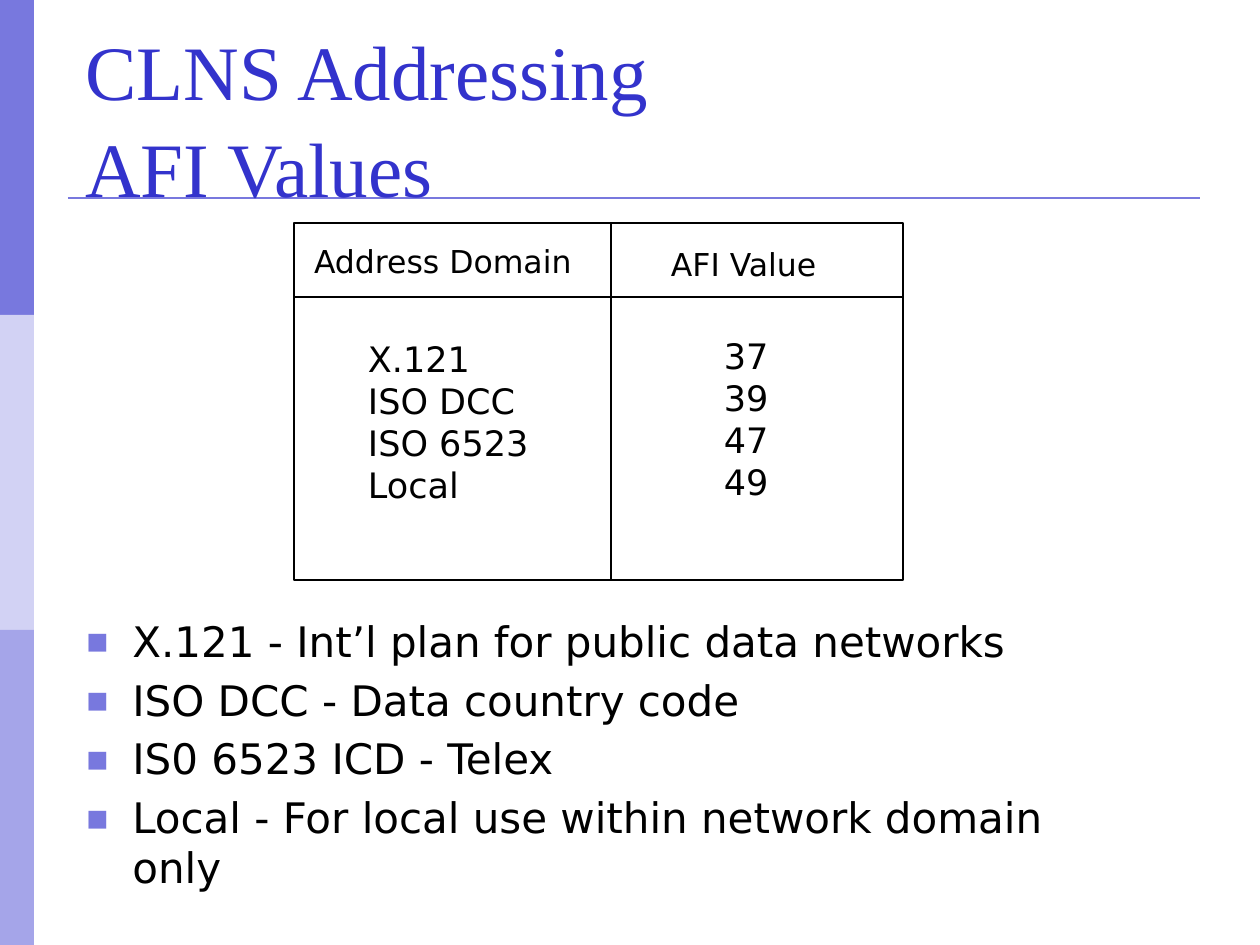
import dataclasses

import lxml.etree
import pptx
import pptx.dml.color
import pptx.enum.shapes
import pptx.enum.text
import pptx.oxml.ns
import pptx.util

PX_PER_INCH = 126
BODY_FONT = "DejaVu Sans"
BLACK = "000000"
ACCENT = "7878DE"
RULE_WIDTH = 1.5


@dataclasses.dataclass(frozen=True)
class Box:
    left: int
    top: int
    width: int
    height: int


@dataclasses.dataclass(frozen=True)
class TextStyle:
    size: int
    font: str = BODY_FONT
    color: str = BLACK


@dataclasses.dataclass(frozen=True)
class Label:
    box: Box
    lines: tuple[str, ...]
    style: TextStyle


def px(length: int) -> int:
    return round(length * pptx.util.Inches(1) / PX_PER_INCH)


def rgb(color: str) -> pptx.dml.color.RGBColor:
    return pptx.dml.color.RGBColor.from_string(color)


def bounds(box: Box) -> tuple[int, int, int, int]:
    return px(box.left), px(box.top), px(box.width), px(box.height)


def add_rectangle(slide, box: Box, fill: str | None = None, line: str | None = None) -> None:
    shape = slide.shapes.add_shape(pptx.enum.shapes.MSO_SHAPE.RECTANGLE, *bounds(box))
    shape.shadow.inherit = False
    if fill:
        shape.fill.solid()
        shape.fill.fore_color.rgb = rgb(fill)
    else:
        shape.fill.background()
    if line:
        shape.line.color.rgb = rgb(line)
        shape.line.width = pptx.util.Pt(RULE_WIDTH)
    else:
        shape.line.fill.background()


def add_rule(slide, start: tuple[int, int], end: tuple[int, int], color: str) -> None:
    rule = slide.shapes.add_connector(
        pptx.enum.shapes.MSO_CONNECTOR.STRAIGHT, *map(px, start + end)
    )
    rule.line.color.rgb = rgb(color)
    rule.line.width = pptx.util.Pt(RULE_WIDTH)
    lxml.etree.SubElement(rule._element.spPr, pptx.oxml.ns.qn("a:effectLst"))


def add_run(paragraph, text: str, style: TextStyle) -> None:
    run = paragraph.add_run()
    run.text = text
    run.font.name = style.font
    run.font.size = pptx.util.Pt(style.size)
    run.font.color.rgb = rgb(style.color)


def add_frame(slide, box: Box, wrap: bool):
    frame = slide.shapes.add_textbox(*bounds(box)).text_frame
    frame.word_wrap = wrap
    return frame


def add_paragraphs(frame, lines: tuple[str, ...], style: TextStyle) -> None:
    for index, line in enumerate(lines):
        paragraph = frame.add_paragraph() if index else frame.paragraphs[0]
        add_run(paragraph, line, style)


def add_label(slide, label: Label) -> None:
    frame = add_frame(slide, label.box, wrap=False)
    frame.margin_left = frame.margin_right = px(10)
    frame.margin_top = frame.margin_bottom = px(5)
    frame.auto_size = pptx.enum.text.MSO_AUTO_SIZE.SHAPE_TO_FIT_TEXT
    add_paragraphs(frame, label.lines, label.style)


def add_bullet(paragraph) -> None:
    def child(parent, tag: str, **attributes: str):
        return lxml.etree.SubElement(parent, pptx.oxml.ns.qn(tag), attributes)

    properties = paragraph._p.get_or_add_pPr()
    properties.set("marL", str(px(47)))
    properties.set("indent", str(px(-47)))
    child(child(properties, "a:spcBef"), "a:spcPct", val="20000")
    child(child(properties, "a:buClr"), "a:srgbClr", val=ACCENT)
    child(properties, "a:buSzPct", val="85000")
    child(properties, "a:buFont", typeface=BODY_FONT)
    child(properties, "a:buChar", char="▪")


def add_title(slide, box: Box, lines: tuple[str, ...], style: TextStyle) -> None:
    frame = add_frame(slide, box, wrap=True)
    frame.vertical_anchor = pptx.enum.text.MSO_ANCHOR.MIDDLE
    frame.margin_top = px(16)
    paragraph = frame.paragraphs[0]
    paragraph.line_spacing = 1.05
    for index, line in enumerate(lines):
        if index:
            paragraph.add_line_break()
        add_run(paragraph, line, style)


def add_definitions(slide, box: Box, lines: tuple[str, ...], style: TextStyle) -> None:
    frame = add_frame(slide, box, wrap=True)
    add_paragraphs(frame, lines, style)
    for paragraph in frame.paragraphs:
        add_bullet(paragraph)


def add_afi_grid(slide, grid: Box, column_edge: int, header_edge: int) -> None:
    right, bottom = grid.left + grid.width, grid.top + grid.height
    add_rectangle(slide, grid, line=BLACK)
    add_rule(slide, (column_edge, grid.top), (column_edge, bottom), BLACK)
    add_rule(slide, (grid.left, header_edge), (right, header_edge), BLACK)

    header, entry = TextStyle(18), TextStyle(20)
    for label in (
        Label(Box(304, 237, 281, 48), ("Address Domain",), header),
        Label(Box(661, 240, 174, 48), ("AFI Value",), header),
        Label(Box(358, 332, 189, 180), ("X.121", "ISO DCC", "ISO 6523", "Local"), entry),
        Label(Box(714, 329, 66, 180), ("37", "39", "47", "49"), entry),
    ):
        add_label(slide, label)


def main() -> None:
    presentation = pptx.Presentation()
    presentation.slide_width = px(1260)
    presentation.slide_height = px(945)
    slide = presentation.slides.add_slide(presentation.slide_layouts[6])

    band_height = 315
    for index, color in enumerate((ACCENT, "D2D2F4", "A5A5E9")):
        add_rectangle(slide, Box(0, index * band_height, 34, band_height), fill=color)
    add_rule(slide, (68, 198), (1200, 198), ACCENT)

    add_title(
        slide,
        Box(73, 32, 1071, 158),
        ("CLNS Addressing", "AFI Values"),
        TextStyle(44, "Times New Roman", "3333CC"),
    )
    add_definitions(
        slide,
        Box(73, 609, 1071, 310),
        (
            "X.121 - Int’l plan for public data networks",
            "ISO DCC - Data country code",
            "IS0 6523 ICD - Telex",
            "Local - For local use within network domain only",
        ),
        TextStyle(24),
    )
    add_afi_grid(slide, Box(294, 223, 609, 357), column_edge=611, header_edge=297)

    presentation.save("out.pptx")


if __name__ == "__main__":
    main()
